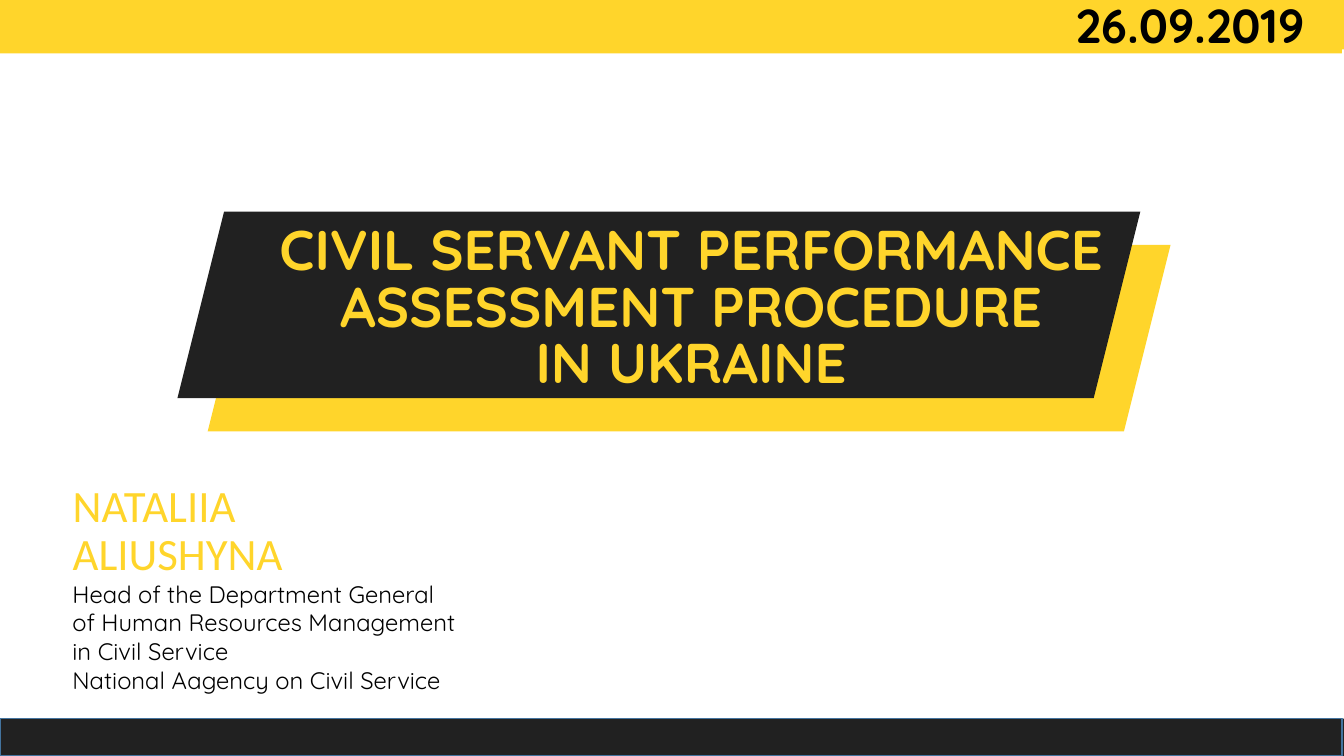
from pptx import Presentation
from pptx.dml.color import RGBColor
from pptx.enum.shapes import MSO_SHAPE as Shape
from pptx.enum.text import MSO_ANCHOR as Anchor, MSO_AUTO_SIZE as Fit, PP_ALIGN as Align
from pptx.util import Inches, Pt

YELLOW = RGBColor(0xFF, 0xD5, 0x2B)
DARK = RGBColor(0x21, 0x21, 0x21)
BLUE = RGBColor(0x43, 0x73, 0x9E)
BLACK = RGBColor(0, 0, 0)

deck = Presentation()
deck.slide_width, deck.slide_height = Inches(13.33), Inches(7.5)
slide = deck.slides.add_slide(deck.slide_layouts[5])
shapes = slide.shapes


def write(box, lines, anchor, form, color, fit=Fit.NONE):
    frame = box.text_frame
    frame.word_wrap = True
    frame.auto_size = fit
    frame.vertical_anchor = anchor
    frame.text = "\n".join(lines)
    for para in frame.paragraphs:
        for key in ("alignment", "line_spacing"):
            setattr(para, key, form[key])
        for run in para.runs:
            for key in ("name", "size", "bold"):
                setattr(run.font, key, form[key])
            run.font.color.rgb = color


blocks = [
    (Shape.RECTANGLE, 11.67, 0, 1.66, 0.49, YELLOW, None),
    (Shape.RECTANGLE, 11.59, 7.13, 1.74, 0.37, DARK, None),
    (Shape.RECTANGLE, 0, 0, 13.31, 0.53, YELLOW, None),
    (Shape.RECTANGLE, 0, 7.13, 13.31, 0.37, DARK, BLUE),
    (Shape.PARALLELOGRAM, 2.06, 2.43, 9.55, 1.85, YELLOW, None),
    (Shape.PARALLELOGRAM, 1.76, 2.1, 9.55, 1.85, DARK, None),
]
for kind, left, top, width, height, fill, line in blocks:
    block = shapes.add_shape(kind, *map(Inches, (left, top, width, height)))
    block.shadow.inherit = False
    block.fill.solid()
    block.fill.fore_color.rgb = fill
    if line is None:
        block.line.fill.background()
    else:
        block.line.color.rgb = line
        block.line.width = Pt(1)

base = dict(name="Quicksand", bold=False, alignment=Align.LEFT, line_spacing=1.0)

name = shapes.title
name.left, name.top, name.width, name.height = map(Inches, (0.62, 4.83, 10, 0.98))
write(name, ["NATALIIA \vALIUSHYNA"], Anchor.BOTTOM,
      base | dict(name="Calibri", size=Pt(32), line_spacing=0.9), YELLOW)

date = shapes.add_textbox(*map(Inches, (10.57, -0.09, 2.76, 0.67)))
write(date, ["26.09.2019"], Anchor.TOP,
      base | dict(size=Pt(34), bold=True), BLACK, Fit.SHAPE_TO_FIT_TEXT)

topic = shapes.add_textbox(*map(Inches, (0.18, 2.35, 13.35, 1.45)))
write(topic, ["CIVIL SERVANT PERFORMANCE", "ASSESSMENT PROCEDURE", "IN UKRAINE"], Anchor.MIDDLE,
      base | dict(size=Pt(40), bold=True, alignment=Align.CENTER, line_spacing=Pt(40.4)), YELLOW)

role = shapes.add_textbox(*map(Inches, (0.62, 5.7, 4.66, 1.25)))
write(role, ["Head of the Department General", "of Human Resources Management",
             "in Civil Service", "National Aagency on Civil Service"], Anchor.TOP,
      base | dict(size=Pt(17)), BLACK, Fit.SHAPE_TO_FIT_TEXT)

deck.save("out.pptx")
